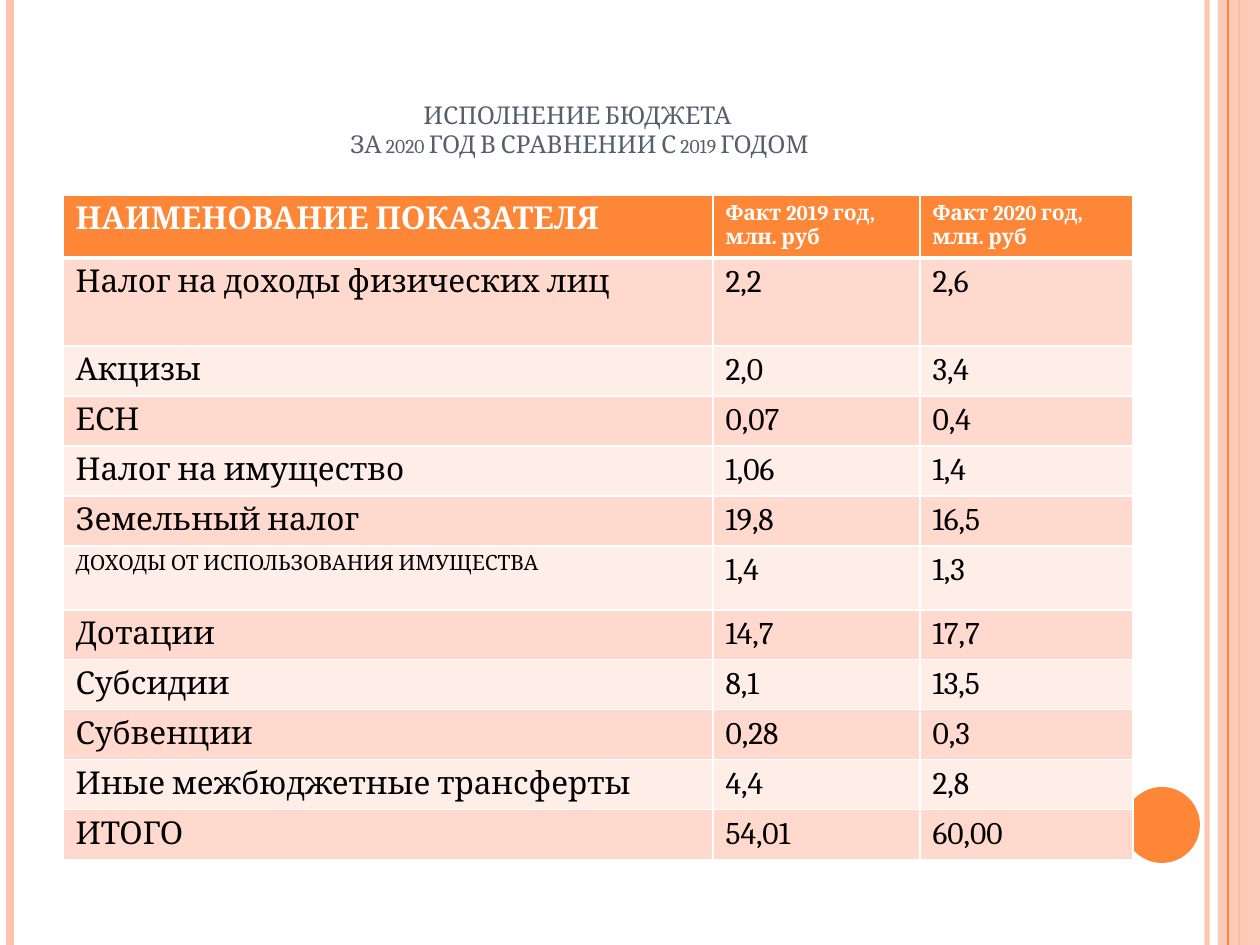
"""Build a slide with a table of budget results for 2020 against 2019."""
from copy import deepcopy

from lxml.etree import SubElement
from pptx import Presentation
from pptx.dml.color import RGBColor
from pptx.enum.shapes import MSO_CONNECTOR, MSO_SHAPE
from pptx.enum.text import MSO_ANCHOR, MSO_AUTO_SIZE, PP_ALIGN
from pptx.oxml.ns import qn
from pptx.util import Pt

TITLE = "ИСПОЛНЕНИЕ БЮДЖЕТА\v ЗА 2020 ГОД В СРАВНЕНИИ С 2019 ГОДОМ"
HEADER = ("НАИМЕНОВАНИЕ ПОКАЗАТЕЛЯ", "Факт 2019 год, млн. руб", "Факт 2020 год, млн. руб")
RESULTS = [
    ("Налог на доходы физических лиц", "2,2", "2,6"),
    ("Акцизы", "2,0", "3,4"),
    ("ЕСН", "0,07", "0,4"),
    ("Налог на имущество", "1,06", "1,4"),
    ("Земельный налог", "19,8", "16,5"),
    ("ДОХОДЫ ОТ ИСПОЛЬЗОВАНИЯ ИМУЩЕСТВА", "1,4", "1,3"),
    ("Дотации", "14,7", "17,7"),
    ("Субсидии", "8,1", "13,5"),
    ("Субвенции", "0,28", "0,3"),
    ("Иные межбюджетные трансферты", "4,4", "2,8"),
    ("ИТОГО", "54,01", "60,00"),
]
COLORS = {
    "orange": "FE8637", "peach": "FEC3AE", "title": "575F6D", "white": "FFFFFF",
    "black": "000000", "odd": "FFD9CE", "even": "FFEDE8",
}
FONT = "Cambria"
SLIDE_SIZE = (1260, 945)
TITLE_BOX = (63, 38, 1029, 127)
TABLE_ORIGIN = (63, 195)
COLUMN_WIDTHS = (650, 207, 213)
ROW_HEIGHT = 50
ROW_HEIGHTS = {0: 63, 1: 88, 6: 64}
SMALL_CELLS = {(0, 1), (0, 2), (6, 0)}
LINES_BELOW_BAND = [(1207, "peach", 3, 93), (10, "peach", 4.5, 100), (1239, "orange", 1.5, 100)]
LINES_ABOVE_BAND = [(1228, "orange", 0.75, 100)]
BAND = (MSO_SHAPE.RECTANGLE, (1218, 0, 42, 945), "peach", 87)
CIRCLE = (MSO_SHAPE.OVAL, (1124, 787, 76, 76), "orange", 100)


def px(*lengths):
    return [round(length * 914400 / 126) for length in lengths]


def color(name):
    return RGBColor.from_string(COLORS[name])


def set_attributes(target, **values):
    for name, value in values.items():
        setattr(target, name, value)


def format_font(font, size, color_name, bold=False):
    set_attributes(font, name=FONT, size=Pt(size), bold=bold)
    font.color.rgb = color(color_name)


def set_opacity(properties, percent):
    if percent < 100:
        for element in properties.iter(qn("a:srgbClr")):
            SubElement(element, qn("a:alpha"), val=str(percent * 1000))


def add_lines(slide, lines):
    for x, color_name, width, opacity in lines:
        connector = slide.shapes.add_connector(
            MSO_CONNECTOR.STRAIGHT, *px(x, 0, x, SLIDE_SIZE[1]))
        connector.line.color.rgb = color(color_name)
        connector.line.width = Pt(width)
        properties = connector._element.spPr
        set_opacity(properties, opacity)
        SubElement(properties, qn("a:effectLst"))


def add_plain_shape(slide, kind, box, color_name, opacity):
    shape = slide.shapes.add_shape(kind, *px(*box))
    shape.shadow.inherit = False
    shape.fill.solid()
    shape.fill.fore_color.rgb = color(color_name)
    shape.line.fill.background()
    set_opacity(shape._element.spPr, opacity)


def fill_title(title):
    left, top, width, height = px(*TITLE_BOX)
    set_attributes(title, left=left, top=top, width=width, height=height)
    frame = title.text_frame
    frame.text = TITLE
    set_attributes(frame, word_wrap=True, auto_size=MSO_AUTO_SIZE.NONE,
                   vertical_anchor=MSO_ANCHOR.BOTTOM)
    paragraph = frame.paragraphs[0]
    paragraph.alignment = PP_ALIGN.CENTER
    for run in paragraph.runs:
        format_font(run.font, 14, "title")
        run._r.get_or_add_rPr().set("cap", "small")
    for line_break in paragraph._p.findall(qn("a:br")):
        line_break.append(deepcopy(paragraph.runs[0]._r.rPr))


def add_borders(cell, bottom_width):
    properties = cell._tc.get_or_add_tcPr()
    widths = {"a:lnL": 1, "a:lnR": 1, "a:lnT": 1, "a:lnB": bottom_width}
    for index, (tag, width) in enumerate(widths.items()):
        border = SubElement(properties, qn(tag), w=str(Pt(width)))
        fill = SubElement(border, qn("a:solidFill"))
        SubElement(fill, qn("a:srgbClr"), val=COLORS["white"])
        properties.insert(index, border)


def add_budget_table(slide):
    rows = [HEADER, *RESULTS]
    heights = [ROW_HEIGHTS.get(index, ROW_HEIGHT) for index in range(len(rows))]
    table = slide.shapes.add_table(
        len(rows), len(HEADER),
        *px(*TABLE_ORIGIN, sum(COLUMN_WIDTHS), sum(heights))).table
    for column, width in zip(table.columns, px(*COLUMN_WIDTHS)):
        column.width = width
    for row, height in zip(table.rows, px(*heights)):
        row.height = height
    for row_index, texts in enumerate(rows):
        is_header = row_index == 0
        fill_name = "orange" if is_header else ("even", "odd")[row_index % 2]
        for column_index, text in enumerate(texts):
            cell = table.cell(row_index, column_index)
            cell.text = text
            cell.fill.solid()
            cell.fill.fore_color.rgb = color(fill_name)
            size = 12 if (row_index, column_index) in SMALL_CELLS else 18
            format_font(cell.text_frame.paragraphs[0].runs[0].font, size,
                        "white" if is_header else "black", is_header)
            add_borders(cell, 3 if row_index == 0 else 1)
            if row_index == 1:
                top = cell._tc.tcPr.find(qn("a:lnT"))
                top.set("w", str(Pt(3)))


def main():
    presentation = Presentation()
    width, height = px(*SLIDE_SIZE)
    set_attributes(presentation, slide_width=width, slide_height=height)
    slide = presentation.slides.add_slide(presentation.slide_layouts[5])
    fill_title(slide.shapes.title)
    add_lines(slide, LINES_BELOW_BAND)
    add_plain_shape(slide, *BAND)
    add_lines(slide, LINES_ABOVE_BAND)
    add_plain_shape(slide, *CIRCLE)
    add_budget_table(slide)
    presentation.save("out.pptx")


if __name__ == "__main__":
    main()
